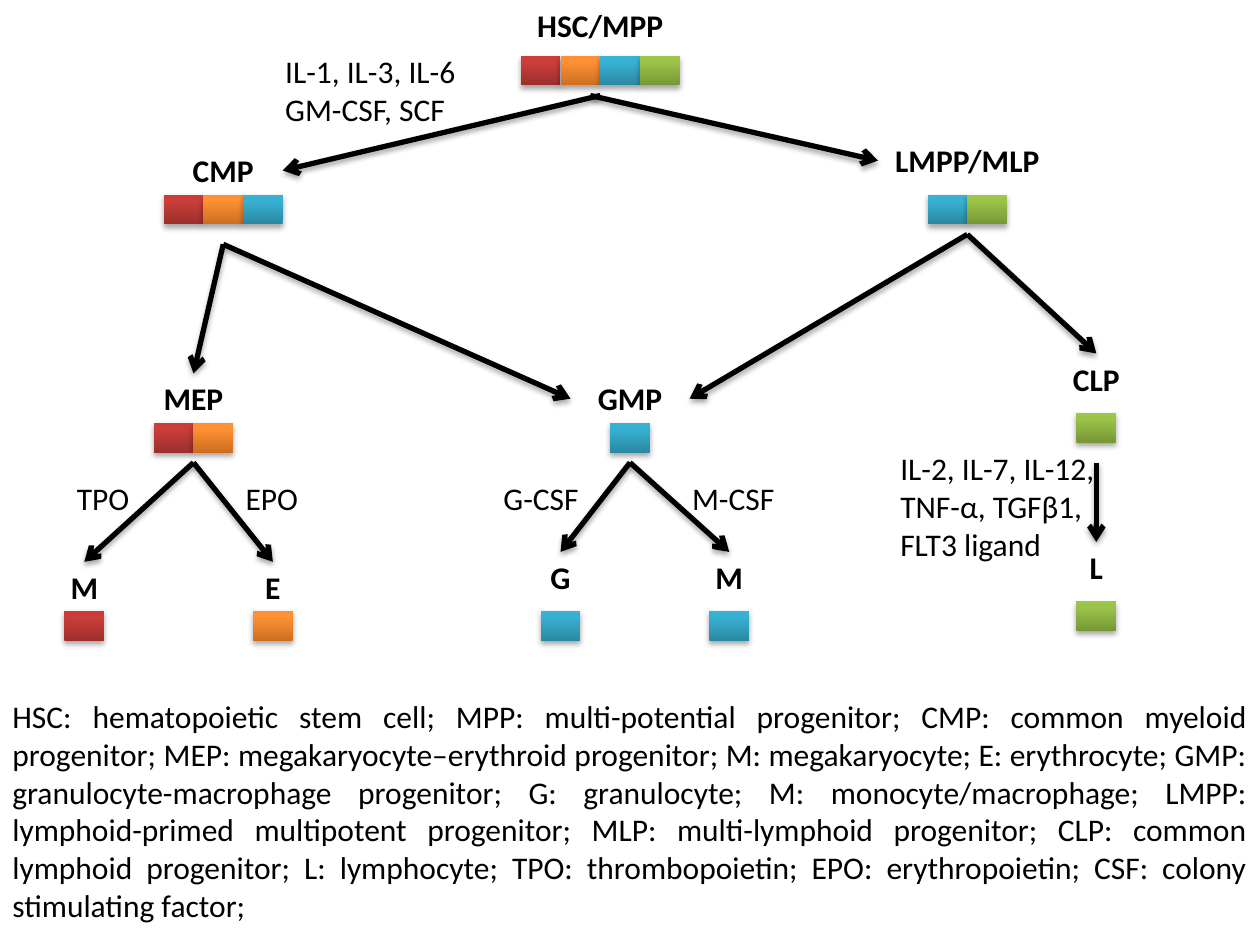
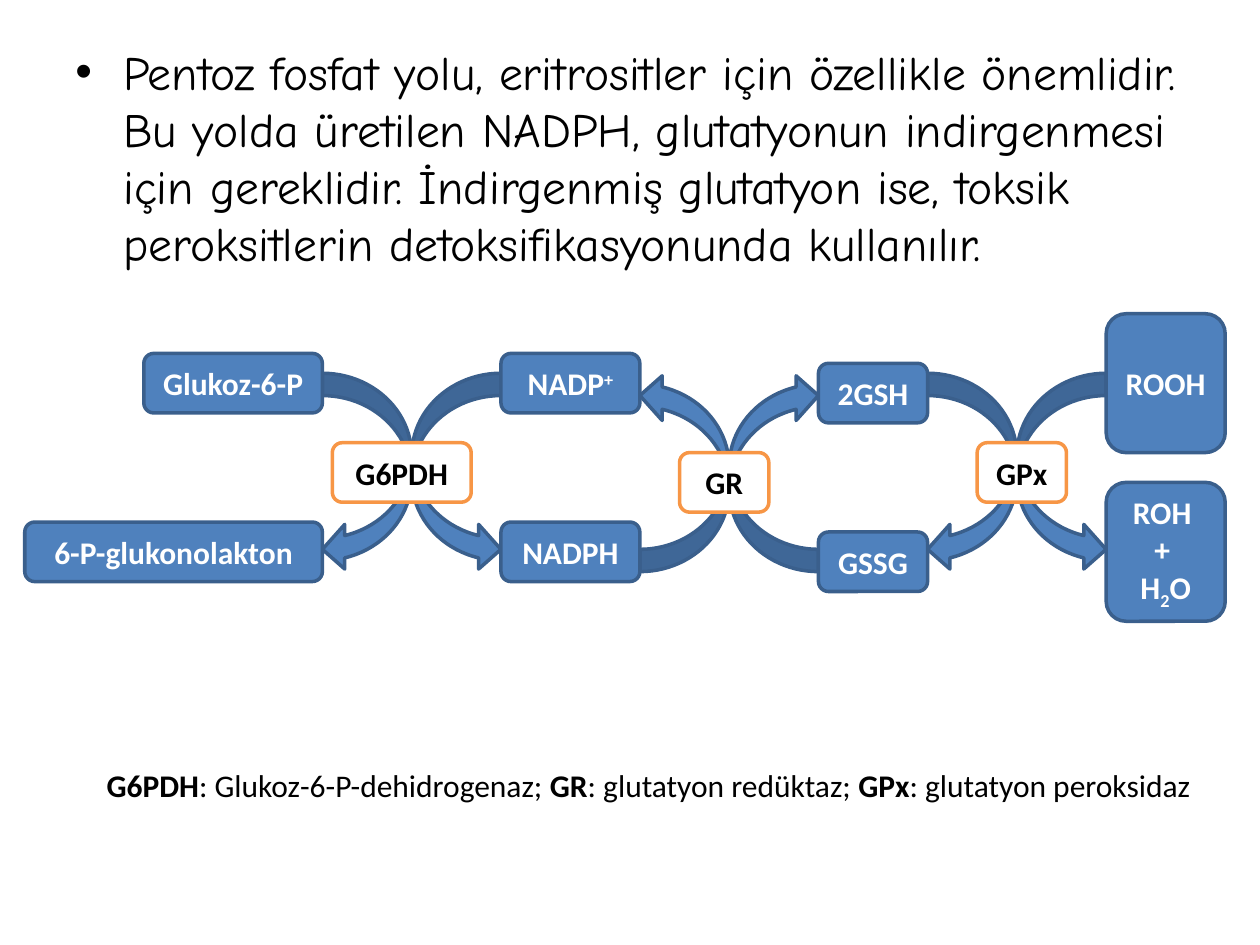
from lxml.etree import SubElement
from pptx import Presentation
from pptx.dml.color import RGBColor
from pptx.enum.shapes import MSO_CONNECTOR as Connector, MSO_SHAPE as Shape
from pptx.enum.text import MSO_ANCHOR as Anchor, PP_ALIGN as Align
from pptx.oxml.ns import qn
from pptx.util import Inches, Pt

COLUMNS, ROWS = 254, 190
TOP, LEFT, RIGHT = 0, 1, 3
BLACK, WHITE = "000000", "FFFFFF"
BLUE, NAVY, ORANGE = "4F81BD", "3A5F8C", "F79646"
LINEAGES = {
    "R": ("9C2F2D", "CB3E3A", "CE3B37"),
    "O": ("CC6E20", "FF9034", "FF9136"),
    "B": ("2A88A2", "37B1D2", "34B4D6"),
    "G": ("779737", "9BC348", "9DC746"),
}
CELL_WIDTH, CELL_HEIGHT, LABEL_HEIGHT = 8, 6, 10.25


def color(code):
    return RGBColor.from_string(code)


class Deck:
    font, size = "Calibri", 18

    def __init__(self):
        self.presentation = Presentation()
        self.presentation.slide_width = Inches(10)
        self.presentation.slide_height = Inches(7.5)
        self.unit = self.presentation.slide_width / COLUMNS
        self.margin = (self.presentation.slide_height - ROWS * self.unit) / 2
        self.slide = None

    def add_slide(self):
        self.slide = self.presentation.slides.add_slide(self.presentation.slide_layouts[6])

    def x(self, column):
        return round(column * self.unit)

    def y(self, row):
        return round(row * self.unit + self.margin)

    def frame(self, column, row, width, height):
        return self.x(column), self.y(row), self.x(width), self.x(height)

    def add_runs(self, shape, paragraphs, align=Align.LEFT, ink=BLACK, bold=False,
                 font=font, size=size):
        text_frame = shape.text_frame
        for index, runs in enumerate(paragraphs):
            paragraph = text_frame.add_paragraph() if index else text_frame.paragraphs[0]
            paragraph.alignment = align
            for part in [runs] if isinstance(runs, str) else runs:
                text, changes = (part, {}) if isinstance(part, str) else part
                run = paragraph.add_run()
                run.text = text
                run.font.name = font
                run.font.size = Pt(size)
                run.font.bold = changes.get("bold", bold)
                run.font.color.rgb = color(ink)
                if "baseline" in changes:
                    run.font._element.set("baseline", str(changes["baseline"] * 1000))

    def text(self, column, row, width, height, *paragraphs, wrap=True, **style):
        box = self.slide.shapes.add_textbox(*self.frame(column, row, width, height))
        box.text_frame.word_wrap = wrap
        self.add_runs(box, paragraphs, **style)
        return box

    def bullet(self, column, row, width, height, text, **style):
        box = self.text(column, row, width, height, text, **style)
        properties = box.text_frame.paragraphs[0]._p.get_or_add_pPr()
        properties.set("marL", str(Inches(0.38)))
        properties.set("indent", str(Inches(-0.38)))
        spacing = SubElement(properties, qn("a:spcBef"))
        SubElement(spacing, qn("a:spcPct"), val="20000")
        SubElement(properties, qn("a:buFont"), typeface="Arial")
        SubElement(properties, qn("a:buChar"), char="•")

    def shape(self, preset, column, row, width, height, fill=BLUE, line=NAVY):
        shape = self.slide.shapes.add_shape(preset, *self.frame(column, row, width, height))
        shape.shadow.inherit = False
        shape.fill.solid()
        shape.fill.fore_color.rgb = color(fill)
        shape.line.color.rgb = color(line)
        shape.line.width = Pt(2)
        return shape

    def box(self, column, row, width, height, *paragraphs, ink=WHITE, **paint):
        shape = self.shape(Shape.ROUNDED_RECTANGLE, column, row, width, height, **paint)
        shape.text_frame.word_wrap = True
        shape.text_frame.vertical_anchor = Anchor.MIDDLE
        self.add_runs(shape, paragraphs, align=Align.CENTER, ink=ink, bold=True)

    def curved_arrow(self, column, row, flips=""):
        shape = self.shape(Shape.CURVED_LEFT_ARROW, column, row, 18, 40)
        transform = shape._element.spPr.find(qn("a:xfrm"))
        for axis in flips:
            transform.set("flip" + axis, "1")

    def cast_shadow(self, effects):
        shadow = SubElement(effects, qn("a:outerShdw"), blurRad="40000", dist="23000",
                            dir="5400000", rotWithShape="0")
        tint = SubElement(shadow, qn("a:srgbClr"), val=BLACK)
        SubElement(tint, qn("a:alpha"), val="35000")

    def cell(self, column, row, shades):
        shape = self.shape(Shape.RECTANGLE, column, row, CELL_WIDTH, CELL_HEIGHT)
        shape.line.fill.background()
        shape.fill.gradient()
        shape.fill.gradient_angle = 90
        properties = shape._element.spPr
        stops = properties.find(qn("a:gradFill")).find(qn("a:gsLst"))
        stops.clear()
        for position, shade in zip((0, 80, 100), shades):
            stop = SubElement(stops, qn("a:gs"), pos=str(position * 1000))
            SubElement(stop, qn("a:srgbClr"), val=shade)
        self.cast_shadow(properties.find(qn("a:effectLst")))

    def progenitor(self, name, center, label_row, cell_row, lineages, width=24):
        start = center - len(lineages) * CELL_WIDTH / 2
        for index, lineage in enumerate(lineages):
            self.cell(start + index * CELL_WIDTH, cell_row, LINEAGES[lineage])
        return self.text(center - width / 2, label_row, width, LABEL_HEIGHT, name,
                         align=Align.CENTER, bold=True)

    def arrow(self, column, row, target, side):
        start = self.x(column), self.y(row)
        connector = self.slide.shapes.add_connector(Connector.STRAIGHT, *start, *start)
        connector.end_connect(target, side)
        connector.line.color.rgb = color(BLACK)
        connector.line.width = Pt(3)
        properties = connector._element.spPr
        SubElement(properties.find(qn("a:ln")), qn("a:tailEnd"), type="arrow")
        self.cast_shadow(SubElement(properties, qn("a:effectLst")))


def build_hematopoiesis(deck):
    deck.add_slide()
    deck.progenitor("HSC/MPP", 121, -0.25, 11, "ROBG", 32)
    cmp = deck.progenitor("CMP", 45, 29, 39, "ROB")
    lmpp = deck.progenitor("LMPP/MLP", 195, 27, 39, "BG", 36)
    mep = deck.progenitor("MEP", 39, 75, 85, "RO")
    gmp = deck.progenitor("GMP", 127, 75, 85, "B")
    clp = deck.progenitor("CLP", 221, 71, 83, "G", 36)
    megakaryocyte = deck.progenitor("M", 17, 113, 123, "R")
    erythrocyte = deck.progenitor("E", 55, 113, 123, "O")
    granulocyte = deck.progenitor("G", 113, 111, 123, "B")
    macrophage = deck.progenitor("M", 147, 111, 123, "B")
    lymphocyte = deck.progenitor("L", 221, 109, 121, "G", 36)

    for column, row, target, side in (
        (121, 19, cmp, RIGHT), (119, 19, lmpp, LEFT),
        (45, 49, mep, TOP), (45, 49, gmp, LEFT),
        (39, 93, megakaryocyte, TOP), (39, 93, erythrocyte, TOP),
        (127, 93, granulocyte, TOP), (127, 93, macrophage, TOP),
        (195, 47, gmp, RIGHT), (195, 47, clp, TOP),
        (221, 93, lymphocyte, TOP),
    ):
        deck.arrow(column, row, target, side)

    deck.text(55, 9, 40, 18, "IL-1, IL-3, IL-6", "GM-CSF, SCF", wrap=False)
    for factor, column, width in (("TPO", 13, 15.75), ("EPO", 47, 15.75),
                                  ("G-CSF", 99, 20.5), ("M-CSF", 137, 21.75)):
        deck.text(column, 95, width, LABEL_HEIGHT, factor, wrap=False)
    deck.text(179, 89, 50, 25.65, "IL-2, IL-7, IL-12, TNF-α, TGFβ1, FLT3 ligand")
    deck.text(
        0, 139, COLUMNS, 48.7,
        "HSC: hematopoietic stem cell; MPP: multi-potential progenitor; "
        "CMP: common myeloid progenitor; MEP: megakaryocyte–erythroid progenitor; "
        "M: megakaryocyte; E: erythrocyte; GMP: granulocyte-macrophage progenitor; "
        "G: granulocyte; M: monocyte/macrophage; LMPP: lymphoid-primed multipotent "
        "progenitor; MLP: multi-lymphoid progenitor; CLP: common lymphoid progenitor; "
        "L: lymphocyte; TPO: thrombopoietin; EPO: erythropoietin; "
        "CSF: colony stimulating factor;",
        align=Align.JUSTIFY)


def build_pentose_pathway(deck):
    deck.add_slide()
    deck.bullet(
        12.7, 7.1, 228.6, 50,
        "Pentoz fosfat yolu, eritrositler için özellikle önemlidir. "
        "Bu yolda üretilen NADPH, glutatyonun indirgenmesi için gereklidir. "
        "İndirgenmiş glutatyon ise, toksik peroksitlerin detoksifikasyonunda kullanılır.",
        font="Comic Neue", size=27.2)

    for column, flips in ((65, ""), (83, "H"), (147, "HV"), (129, "V"),
                          (187, ""), (205, "H")):
        deck.curved_arrow(column, 75, flips)

    for column, row, width, height, *paragraphs in (
        (29, 71, 36, 12, "Glukoz-6-P"),
        (5, 105, 60, 12, "6-P-glukonolakton"),
        (101, 71, 28, 12, ["NADP", ("+", {"baseline": 30})]),
        (101, 105, 28, 12, "NADPH"),
        (165, 107, 22, 12, "GSSG"),
        (165, 73, 22, 12, "2GSH"),
        (223, 63, 24, 28, "ROOH"),
        (223, 97, 24, 28, "ROH ", "+ ", ["H", ("2", {"baseline": -25}), "O"]),
    ):
        deck.box(column, row, width, height, *paragraphs)

    for enzyme, column, row, width in (("GPx", 197, 89, 18), ("G6PDH", 67, 89, 28),
                                       ("GR", 137, 91, 18)):
        deck.box(column, row, width, 12, enzyme, ink=BLACK, fill=WHITE, line=ORANGE)

    strong = {"bold": True}
    deck.text(19, 153, 230, LABEL_HEIGHT, [
        ("G6PDH", strong), ": Glukoz-6-P-dehidrogenaz; ",
        ("GR", strong), ": glutatyon redüktaz; ",
        ("GPx", strong), ": glutatyon peroksidaz"])


def main():
    deck = Deck()
    build_hematopoiesis(deck)
    build_pentose_pathway(deck)
    deck.presentation.save("out.pptx")


if __name__ == "__main__":
    main()
